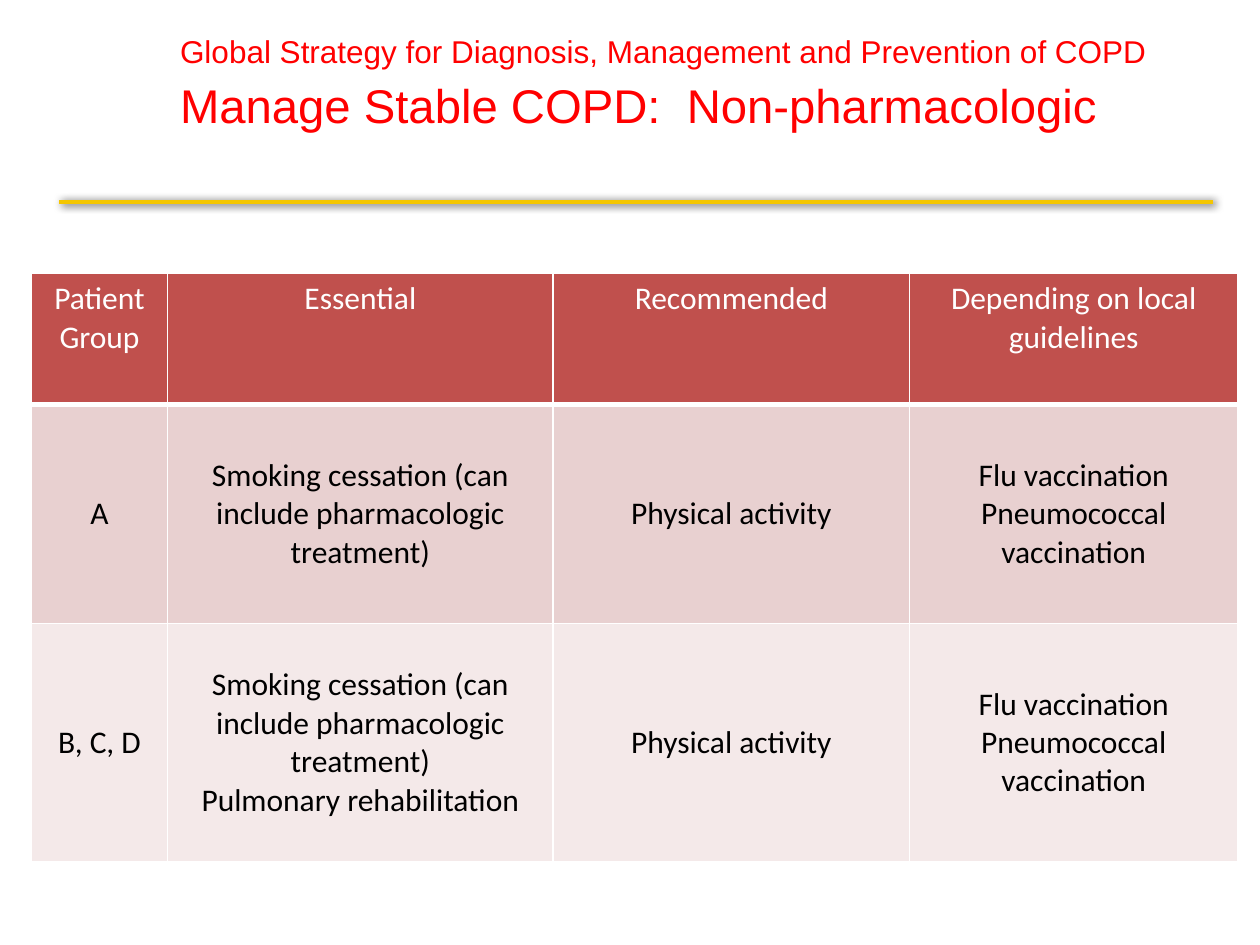
from dataclasses import dataclass

from lxml import etree
from pptx import Presentation
from pptx.dml.color import RGBColor
from pptx.enum import shapes, text
from pptx.oxml import ns
from pptx.util import Pt

RED, GOLD, WHITE, BLACK = "FF0000", "F4C600", "FFFFFF", "000000"
COLUMN_WIDTHS = (77.8, 220.3, 203.8, 187.5)


@dataclass(frozen=True)
class TreatmentRow:
    height: float
    fill: str
    ink: str
    anchor: text.MSO_ANCHOR
    bottom_border: float
    entries: tuple[str, ...]


SMOKING = "Smoking cessation (can include pharmacologic treatment)"
ACTIVITY = "Physical activity"
VACCINES = "Flu vaccination\nPneumococcal vaccination"

ROWS = (
    TreatmentRow(74.9, "C0504D", WHITE, text.MSO_ANCHOR.TOP, 3,
                 ("Patient\nGroup", "Essential", "Recommended",
                  "Depending on local guidelines")),
    TreatmentRow(125.3, "E8D0D0", BLACK, text.MSO_ANCHOR.MIDDLE, 1,
                 ("A", SMOKING, ACTIVITY, VACCINES)),
    TreatmentRow(136.1, "F4E9E9", BLACK, text.MSO_ANCHOR.MIDDLE, 1,
                 ("B, C, D", f"{SMOKING}\nPulmonary rehabilitation", ACTIVITY, VACCINES)),
)


def rgb(code: str) -> RGBColor:
    return RGBColor.from_string(code)


def style_run(run, face: str, size: float, ink: str) -> None:
    run.font.name = face
    run.font.size = Pt(size)
    run.font.color.rgb = rgb(ink)


def add_heading(slide) -> None:
    heading = slide.shapes.add_textbox(Pt(95.8), Pt(0), Pt(624.2), Pt(92.2)).text_frame
    heading.word_wrap = True
    heading.vertical_anchor = text.MSO_ANCHOR.MIDDLE
    paragraph = heading.paragraphs[0]
    paragraph.text = ("Global Strategy for Diagnosis, Management and Prevention of COPD"
                      "\vManage Stable COPD:  Non-pharmacologic")
    paragraph.line_spacing = 1.1
    for run, size in zip(paragraph.runs, (18, 27)):
        style_run(run, "Arial", size, RED)


def add_border(cell, side: str, width: float) -> None:
    line = etree.SubElement(cell._tc.get_or_add_tcPr(), ns.qn(f"a:ln{side}"), w=str(Pt(width)))
    fill = etree.SubElement(line, ns.qn("a:solidFill"))
    etree.SubElement(fill, ns.qn("a:srgbClr"), val=WHITE)


def fill_cell(cell, row: TreatmentRow, entry: str) -> None:
    for side in "LRTB":
        add_border(cell, side, row.bottom_border if side == "B" else 1)
    cell.fill.solid()
    cell.fill.fore_color.rgb = rgb(row.fill)
    cell.vertical_anchor = row.anchor
    cell.text_frame.text = entry
    for paragraph in cell.text_frame.paragraphs:
        paragraph.alignment = text.PP_ALIGN.CENTER
        for run in paragraph.runs:
            style_run(run, "Calibri", 18, row.ink)
            run.font.bold = False


def add_treatments(slide) -> None:
    treatments = slide.shapes.add_table(
        len(ROWS), len(COLUMN_WIDTHS), Pt(18), Pt(156.2),
        Pt(sum(COLUMN_WIDTHS)), Pt(sum(row.height for row in ROWS))).table
    treatments.horz_banding = False
    for column, width in zip(treatments.columns, COLUMN_WIDTHS):
        column.width = Pt(width)
    for table_row, row in zip(treatments.rows, ROWS):
        table_row.height = Pt(row.height)
        for cell, entry in zip(table_row.cells, row.entries):
            fill_cell(cell, row, entry)


def add_divider(slide) -> None:
    divider = slide.shapes.add_connector(
        shapes.MSO_CONNECTOR.STRAIGHT, Pt(33.8), Pt(115.2), Pt(693.4), Pt(115.2))
    divider.line.color.rgb = rgb(GOLD)
    divider.line.width = Pt(2.25)
    effects = etree.SubElement(divider._element.spPr, ns.qn("a:effectLst"))
    shadow = etree.SubElement(effects, ns.qn("a:outerShdw"), blurRad=str(Pt(5)),
                              dist=str(Pt(1.4)), dir=str(45 * 60000),
                              algn="ctr", rotWithShape="0")
    tint = etree.SubElement(shadow, ns.qn("a:srgbClr"), val=BLACK)
    etree.SubElement(tint, ns.qn("a:alpha"), val="75000")


def main() -> None:
    deck = Presentation()
    deck.slide_width, deck.slide_height = Pt(720), Pt(540)
    slide = deck.slides.add_slide(deck.slide_layouts[6])
    slide.background.fill.solid()
    slide.background.fill.fore_color.rgb = rgb(WHITE)
    add_heading(slide)
    add_treatments(slide)
    add_divider(slide)
    deck.save("out.pptx")


if __name__ == "__main__":
    main()
